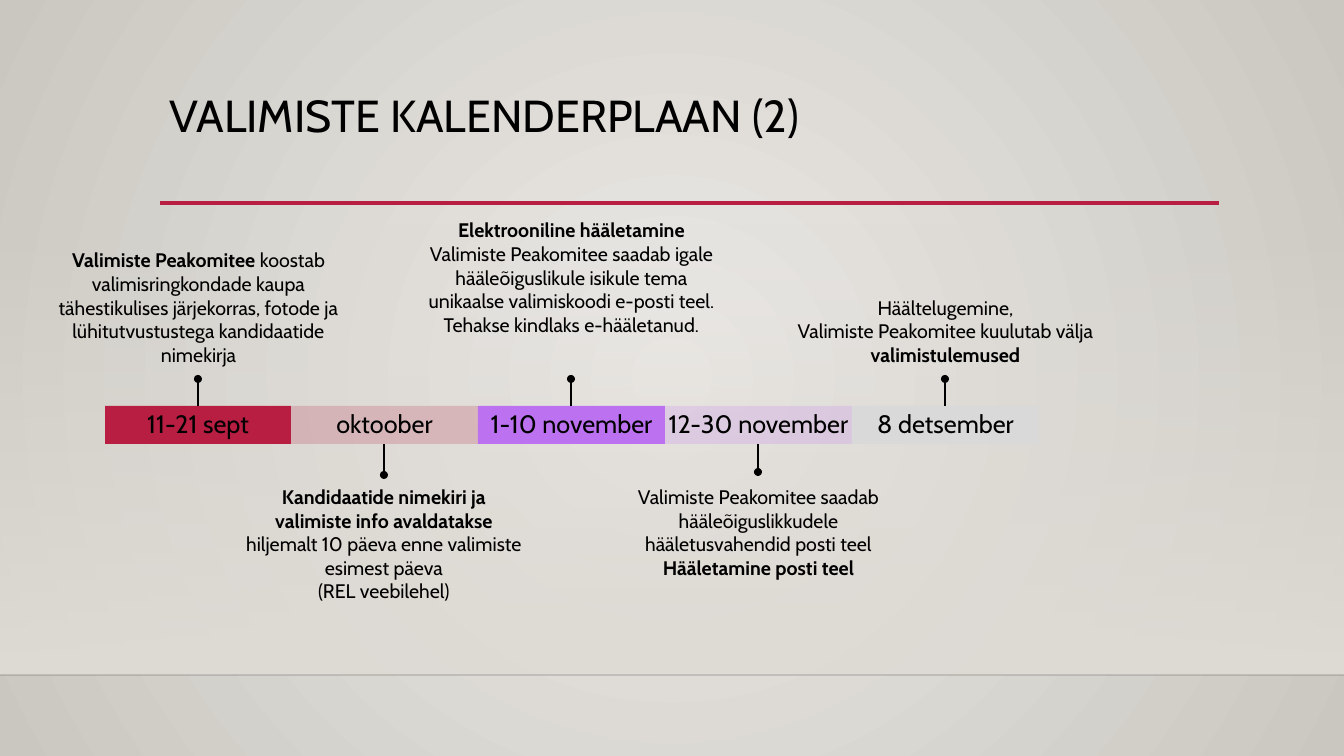
from dataclasses import dataclass

import pptx
import pptx.dml.color
import pptx.enum.shapes
import pptx.enum.text
import pptx.oxml
import pptx.oxml.ns
import pptx.util

EMU_PER_PX = 914400 / 100.8
FONT = "Cabin"
BLACK, CRIMSON, VIOLET, GREY = "000000", "B71E42", "BC72F0", "D9D9D9"
BAR_LEFT, BAR_TOP, BAR_WIDTH, BAR_HEIGHT = 105, 406, 934, 38
DOT_SIZE = 8
NOTE_HEIGHT = 133
ABOVE_TOP, BELOW_TOP = 235, 483
ANCHOR = pptx.enum.text.MSO_ANCHOR
ALIGN = pptx.enum.text.PP_ALIGN
SHAPE = pptx.enum.shapes.MSO_SHAPE


@dataclass(frozen=True)
class Run:
    text: str
    bold: bool = False


@dataclass(frozen=True)
class Period:
    dates: str
    colour: str
    opacity: int
    note: list[Run]
    note_top: int
    dot_y: int
    note_width: int = 311

    @property
    def is_above(self) -> bool:
        return self.note_top < BAR_TOP


PERIODS = [
    Period("11-21 sept", CRIMSON, 100, [
        Run("Valimiste Peakomitee ", True),
        Run("koostab valimisringkondade kaupa tähestikulises järjekorras, "
            "fotode ja lühitutvustustega kandidaatide nimekirja"),
    ], ABOVE_TOP, 379),
    Period("oktoober", CRIMSON, 20, [
        Run("Kandidaatide nimekiri ja valimiste info avaldatakse\n", True),
        Run("hiljemalt 10 päeva enne valimiste esimest päeva\n(REL veebilehel)"),
    ], BELOW_TOP, 475, 294),
    Period("1-10 november", VIOLET, 100, [
        Run("Elektrooniline hääletamine\n", True),
        Run("Valimiste Peakomitee saadab igale hääleõiguslikule isikule tema "
            "unikaalse valimiskoodi e-posti teel.\nTehakse kindlaks e-hääletanud."),
    ], ABOVE_TOP - 30, 379),
    Period("12-30 november", VIOLET, 20, [
        Run("Valimiste Peakomitee saadab hääleõiguslikkudele "
            "hääletusvahendid posti teel\n"),
        Run("Hääletamine posti teel", True),
    ], BELOW_TOP, 472),
    Period("8 detsember", GREY, 100, [
        Run("Häältelugemine,\nValimiste Peakomitee kuulutab välja "),
        Run("valimistulemused", True),
    ], ABOVE_TOP, 379),
]


def px(length: int) -> int:
    return round(length * EMU_PER_PX)


def rgb(colour: str) -> pptx.dml.color.RGBColor:
    return pptx.dml.color.RGBColor.from_string(colour)


def set_opacity(colour_parent, percent: int) -> None:
    """Make the last plain colour inside an element partly transparent."""
    colour = colour_parent.xpath(".//a:srgbClr")[-1]
    alpha = pptx.oxml.parse_xml(
        f'<a:alpha {pptx.oxml.ns.nsdecls("a")} val="{percent * 1000}"/>')
    colour.append(alpha)


def set_gradient(fill, start: str, end: str) -> None:
    fill.gradient()
    for stop, position, colour in zip(fill.gradient_stops, (0, 1), (start, end)):
        stop.position = position
        stop.color.rgb = rgb(colour)


def add_block(slide, kind, left: int, top: int, width: int, height: int):
    block = slide.shapes.add_shape(kind, px(left), px(top), px(width), px(height))
    block.shadow.inherit = False
    block.line.fill.background()
    return block


def add_line(slide, start: tuple[int, int], end: tuple[int, int],
             colour: str, points: float):
    line = slide.shapes.add_connector(
        pptx.enum.shapes.MSO_CONNECTOR.STRAIGHT, *map(px, start + end))
    line.line.color.rgb = rgb(colour)
    line.line.width = pptx.util.Pt(points)
    line._element.spPr.append(
        pptx.oxml.parse_xml(f'<a:effectLst {pptx.oxml.ns.nsdecls("a")}/>'))
    return line


def write(shape, runs: list[Run], size: int, align, anchor,
          insets: tuple[int, int], spacing: float = 1.0, wrap: bool = True) -> None:
    frame = shape.text_frame
    frame.word_wrap = wrap
    frame.vertical_anchor = anchor
    frame.margin_left = frame.margin_right = px(insets[0])
    frame.margin_top = frame.margin_bottom = px(insets[1])
    paragraph = frame.paragraphs[0]
    paragraph.alignment = align
    paragraph.line_spacing = spacing
    paragraph.font.size = pptx.util.Pt(size)
    for run in runs:
        for index, line in enumerate(run.text.split("\n")):
            if index:
                paragraph.add_line_break()
            if line:
                part = paragraph.add_run()
                part.text = line
                part.font.name = FONT
                part.font.size = pptx.util.Pt(size)
                part.font.bold = run.bold
                part.font.color.rgb = rgb(BLACK)


def add_backdrop(slide) -> None:
    set_gradient(slide.background.fill, "ECEAE7", "CAC7C1")
    gradient = slide._element.xpath(".//p:bg//a:gradFill")[0]
    for linear in gradient.xpath("./a:lin"):
        gradient.remove(linear)
    gradient.append(pptx.oxml.parse_xml(
        f'<a:path {pptx.oxml.ns.nsdecls("a")} path="circle">'
        '<a:fillToRect l="50000" t="50000" r="50000" b="50000"/></a:path>'))

    wall = add_block(slide, SHAPE.RECTANGLE, 0, 223, 1344, 452)
    set_gradient(wall.fill, "DFDBD5", "DFDBD5")
    wall.fill.gradient_angle = 270
    set_opacity(wall._element.xpath(".//a:gs")[0], 0)
    floor_edge = add_line(slide, (0, 675), (1344, 675), "000001", 1)
    set_opacity(floor_edge._element.spPr, 20)


def add_title(slide) -> None:
    add_line(slide, (160, 203), (1219, 203), CRIMSON, 2.5)
    title = slide.shapes.add_textbox(px(160), px(89), px(1058), px(116))
    write(title, [Run("VALIMISTE KALENDERPLAAN (2)")], 32,
          ALIGN.LEFT, ANCHOR.TOP, (10, 5), 0.9)


def add_period(slide, period: Period, left: int, right: int) -> None:
    segment = add_block(slide, SHAPE.RECTANGLE, left, BAR_TOP, right - left, BAR_HEIGHT)
    segment.fill.solid()
    segment.fill.fore_color.rgb = rgb(period.colour)
    if period.opacity < 100:
        set_opacity(segment._element.spPr, period.opacity)
    write(segment, [Run(period.dates)], 18, ALIGN.CENTER, ANCHOR.MIDDLE,
          (3, 0), 0.9, wrap=False)

    centre = (left + right) // 2
    note = slide.shapes.add_textbox(
        px(centre - period.note_width // 2), px(period.note_top),
        px(period.note_width), px(NOTE_HEIGHT))
    write(note, period.note, 14, ALIGN.CENTER,
          ANCHOR.BOTTOM if period.is_above else ANCHOR.TOP, (5, 2))

    bar_edge = BAR_TOP if period.is_above else BAR_TOP + BAR_HEIGHT
    add_line(slide, (centre, period.dot_y), (centre, bar_edge), BLACK, 1)
    dot = add_block(slide, SHAPE.OVAL, centre - DOT_SIZE // 2,
                    period.dot_y - DOT_SIZE // 2, DOT_SIZE, DOT_SIZE)
    dot.fill.solid()
    dot.fill.fore_color.rgb = rgb(BLACK)


def main() -> None:
    deck = pptx.Presentation()
    deck.slide_width, deck.slide_height = px(1344), px(756)
    slide = deck.slides.add_slide(deck.slide_layouts[6])
    add_backdrop(slide)
    add_title(slide)
    edges = [BAR_LEFT + BAR_WIDTH * i // len(PERIODS) for i in range(len(PERIODS) + 1)]
    for period, left, right in zip(PERIODS, edges, edges[1:]):
        add_period(slide, period, left, right)
    deck.save("out.pptx")


if __name__ == "__main__":
    main()
